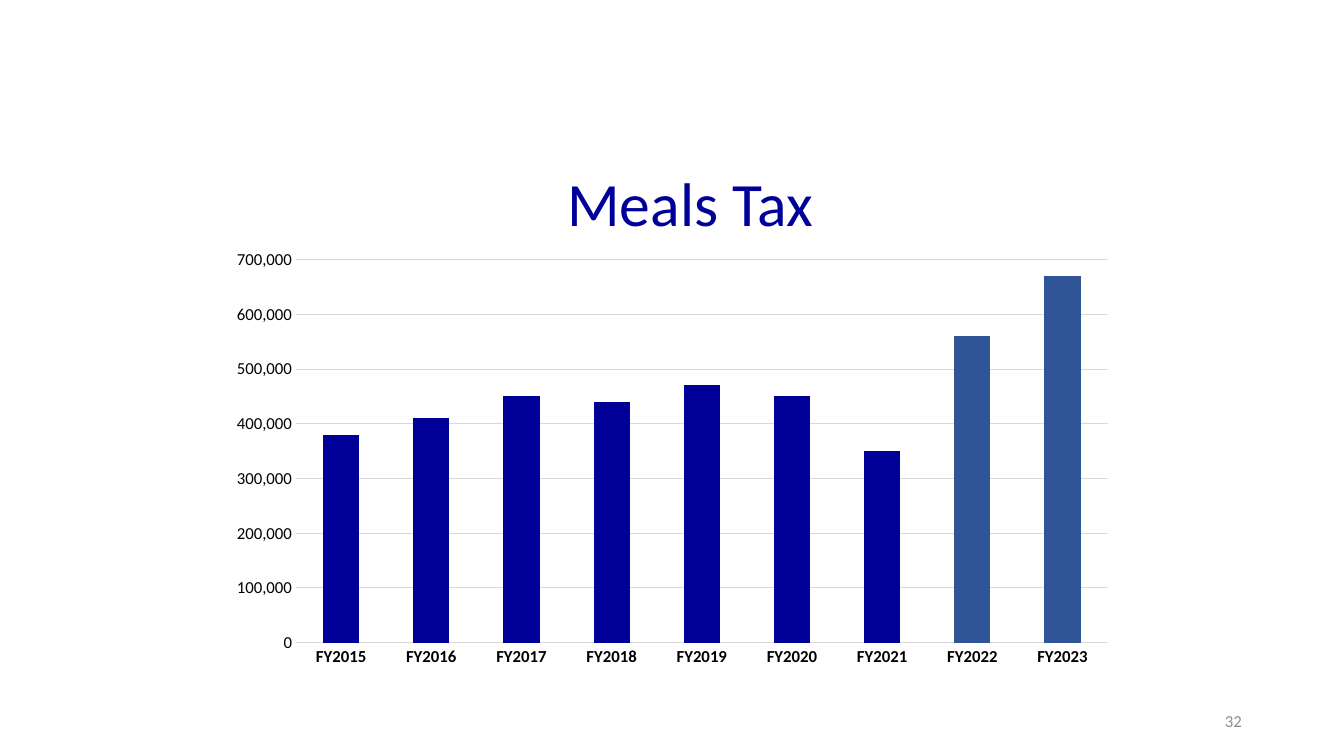
from pptx import Presentation
from pptx.chart.data import CategoryChartData
from pptx.dml.color import RGBColor
from pptx.enum.chart import XL_CHART_TYPE as ChartType, XL_TICK_MARK as TickMark
from pptx.enum.text import MSO_ANCHOR as Anchor, PP_ALIGN as Align
from pptx.util import Cm, Pt

NAVY = RGBColor(0x00, 0x00, 0x99)
STEEL = RGBColor(0x2F, 0x55, 0x97)
BLACK = RGBColor(0x00, 0x00, 0x00)
GRID = RGBColor(0xD9, 0xD9, 0xD9)
GREY = RGBColor(0x8C, 0x8C, 0x8C)
FONT = "Calibri"

FIRST_YEAR = 2015
MEALS_TAX = (380000, 410000, 450000, 440000, 470000, 450000, 350000, 560000, 670000)
NAVY_YEARS = 7


def set_format(target, values):
    for name, value in values.items():
        setattr(target, name, value)


def set_font(font, size, color, bold=False):
    set_format(font, {"name": FONT, "size": Pt(size), "bold": bold})
    font.color.rgb = color


def add_text(slide, text, box, size, color, alignment, line_spacing=1.0):
    shape = slide.shapes.add_textbox(*map(Cm, box))
    frame = shape.text_frame
    set_format(frame, {"word_wrap": True, "vertical_anchor": Anchor.MIDDLE})
    paragraph = frame.paragraphs[0]
    set_format(paragraph, {"alignment": alignment, "line_spacing": line_spacing})
    run = paragraph.add_run()
    run.text = text
    set_font(run.font, size, color)


def style_axis(axis, bold=False):
    set_format(axis, {"major_tick_mark": TickMark.NONE, "minor_tick_mark": TickMark.NONE})
    axis.format.line.fill.background()
    set_font(axis.tick_labels.font, 12, BLACK, bold)


def fill_solid(part, color):
    part.format.fill.solid()
    part.format.fill.fore_color.rgb = color


def add_tax_chart(slide, box):
    data = CategoryChartData(number_format="#,##0")
    data.categories = [f"FY{FIRST_YEAR + index}" for index in range(len(MEALS_TAX))]
    data.add_series("Meals Tax", MEALS_TAX)
    chart = slide.shapes.add_chart(ChartType.COLUMN_STACKED, *map(Cm, box), data).chart
    set_format(chart, {"has_title": False, "has_legend": False})
    set_font(chart.font, 10, BLACK)

    plot = chart.plots[0]
    set_format(plot, {"gap_width": 150, "overlap": 100, "vary_by_categories": False})
    series = plot.series[0]
    fill_solid(series, STEEL)
    for index in range(NAVY_YEARS):
        fill_solid(series.points[index], NAVY)

    style_axis(chart.category_axis, bold=True)
    value_axis = chart.value_axis
    style_axis(value_axis)
    set_format(value_axis, {"minimum_scale": 0, "maximum_scale": 700000,
                            "major_unit": 100000, "has_major_gridlines": True})
    set_format(value_axis.tick_labels, {"number_format": "#,##0",
                                        "number_format_is_linked": False})
    grid_line = value_axis.major_gridlines.format.line
    grid_line.width = Pt(0.75)
    grid_line.color.rgb = GRID


def main():
    presentation = Presentation()
    set_format(presentation, {"slide_width": Cm(33.87), "slide_height": Cm(19.05)})
    slide = presentation.slides.add_slide(presentation.slide_layouts[6])
    add_text(slide, "Meals Tax", (2.79, 4.11, 29.21, 2.21), 44, NAVY, Align.CENTER, 0.9)
    add_tax_chart(slide, (5.51, 6.07, 22.86, 10.95))
    add_text(slide, "32", (23.93, 17.65, 7.62, 1.02), 12, GREY, Align.RIGHT)
    presentation.save("out.pptx")


if __name__ == "__main__":
    main()
